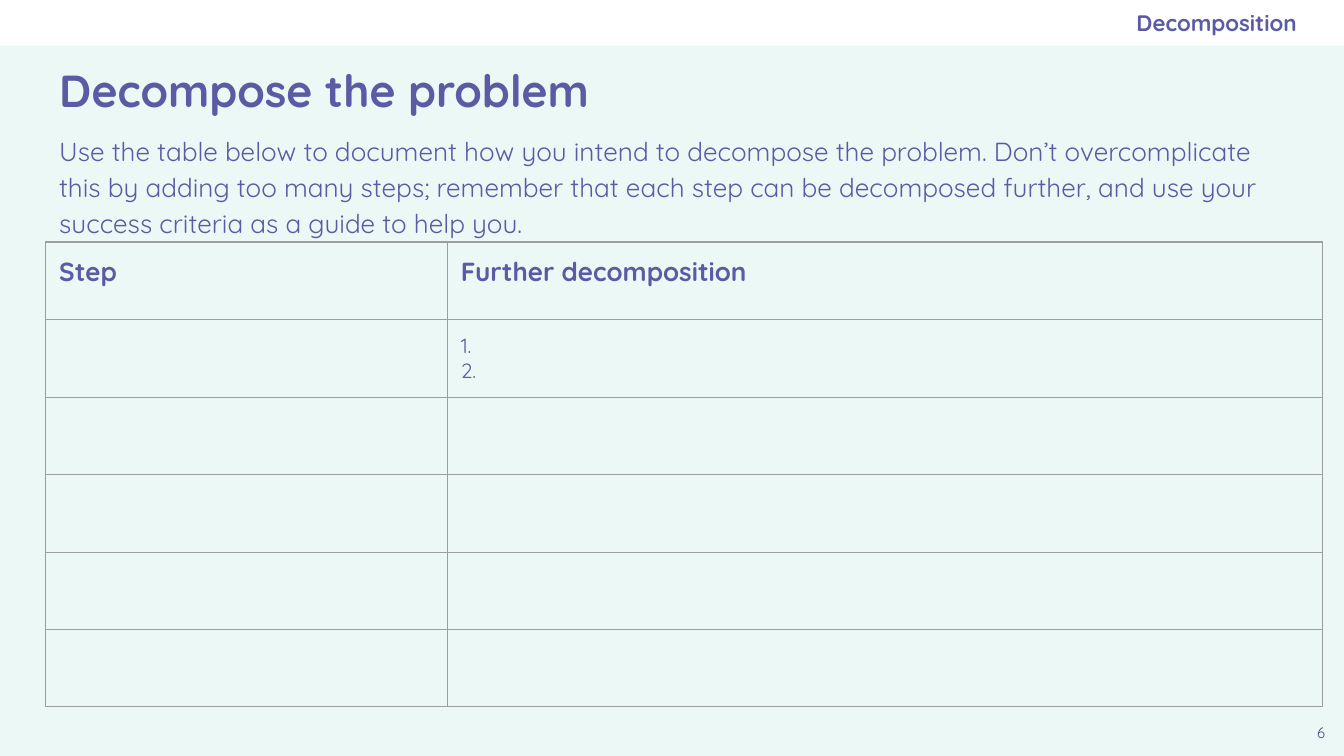
"""Build the slide on decomposing a problem, with its planning table."""
import dataclasses

import lxml.etree
import pptx
import pptx.dml.color
import pptx.enum.shapes
import pptx.enum.text
import pptx.oxml.ns
import pptx.util

Pt = pptx.util.Pt
Align = pptx.enum.text.PP_ALIGN
Anchor = pptx.enum.text.MSO_ANCHOR
qn = pptx.oxml.ns.qn

FONT = "Quicksand"
INK = "5B5BA5"
PAD = 7.2
ROWS = [("Step", "Further decomposition"), ("", "1.\n2.")] + [("", "")] * 4
COLS = (215.2, 468.8)
ROW_H = 41.4


@dataclasses.dataclass
class Label:
    text: str
    box: tuple[float, float, float, float]
    size: float
    bold: bool = False
    ink: str = INK
    align: Align = Align.LEFT
    anchor: Anchor = Anchor.TOP
    right: float = PAD
    lead: float = 1.0
    after: float = 0


TITLE = Label("Decompose the problem", (24.5, 20.2, 671, 55.4), 24, True,
              anchor=Anchor.MIDDLE)
BODY = Label("Use the table below to document how you intend to decompose the "
             "problem. Don’t overcomplicate this by adding too many steps; "
             "remember that each step can be decomposed further, and use your "
             "success criteria as a guide to help you.",
             (24.5, 62.6, 671, 34.6), 14, lead=1.15, after=16)
TOPIC = Label("Decomposition", (414, 0, 280.8, 24.5), 12, True,
              align=Align.RIGHT, anchor=Anchor.MIDDLE, right=0)
NUMBER = Label("6", (695.5, 380.2, 24.5, 24.5), 8, ink="494985",
               align=Align.CENTER)


def color(code: str) -> pptx.dml.color.RGBColor:
    return pptx.dml.color.RGBColor.from_string(code)


def style(frame, size: float, bold: bool, ink: str = INK) -> None:
    for para in frame.paragraphs:
        for run in para.runs:
            font = run.font
            font.name, font.size, font.bold = FONT, Pt(size), bold
            font.color.rgb = color(ink)


def write(shape, label: Label) -> None:
    shape.left, shape.top, shape.width, shape.height = map(Pt, label.box)
    frame = shape.text_frame
    frame.text = label.text
    frame.word_wrap = True
    frame.auto_size = pptx.enum.text.MSO_AUTO_SIZE.NONE
    frame.vertical_anchor = label.anchor
    frame.margin_left = frame.margin_top = frame.margin_bottom = Pt(PAD)
    frame.margin_right = Pt(label.right)
    para = frame.paragraphs[0]
    para.alignment = label.align
    para.line_spacing = label.lead
    para.space_before, para.space_after = Pt(0), Pt(label.after)
    style(frame, label.size, label.bold, label.ink)


def clear_bullet(shape) -> None:
    props = shape.text_frame.paragraphs[0]._p.get_or_add_pPr()
    props.set("marL", "0")
    props.set("indent", "0")
    lxml.etree.SubElement(props, qn("a:buNone"))


def border(cell, code: str = "9E9E9E", width: float = 0.75) -> None:
    props = cell._tc.get_or_add_tcPr()
    for place, side in enumerate(("a:lnL", "a:lnR", "a:lnT", "a:lnB")):
        line = lxml.etree.Element(qn(side), w=str(Pt(width)))
        fill = lxml.etree.SubElement(line, qn("a:solidFill"))
        lxml.etree.SubElement(fill, qn("a:srgbClr"), val=code)
        props.insert(place, line)


def add_grid(slide, left: float, top: float) -> None:
    frame = slide.shapes.add_table(len(ROWS), len(COLS), Pt(left), Pt(top),
                                   Pt(sum(COLS)), Pt(ROW_H * len(ROWS)))
    table = frame.table
    table.first_row = table.horz_banding = False
    for col, width in zip(table.columns, COLS):
        col.width = Pt(width)
    for r, texts in enumerate(ROWS):
        table.rows[r].height = Pt(ROW_H)
        for c, text in enumerate(texts):
            cell = table.cell(r, c)
            cell.text_frame.text = text
            cell.margin_left = cell.margin_right = Pt(PAD)
            cell.margin_top = cell.margin_bottom = Pt(PAD)
            cell.fill.background()
            border(cell)
            style(cell.text_frame, 11 if r else 14, r == 0)


def main() -> None:
    deck = pptx.Presentation()
    deck.slide_width, deck.slide_height = Pt(720), Pt(405)
    slide = deck.slides.add_slide(deck.slide_layouts[1])
    slide.background.fill.solid()
    slide.background.fill.fore_color.rgb = color("ECF8F5")
    band = slide.shapes.add_shape(pptx.enum.shapes.MSO_SHAPE.RECTANGLE,
                                  0, 0, Pt(720), Pt(24.5))
    band.shadow.inherit = False
    band.fill.solid()
    band.fill.fore_color.rgb = color("FFFFFF")
    band.line.fill.background()
    body = slide.placeholders[1]
    write(body, BODY)
    clear_bullet(body)
    write(slide.shapes.title, TITLE)
    for label in (NUMBER, TOPIC):
        write(slide.shapes.add_textbox(*map(Pt, label.box)), label)
    add_grid(slide, 24.5, 129.6)
    deck.save("out.pptx")


if __name__ == "__main__":
    main()
